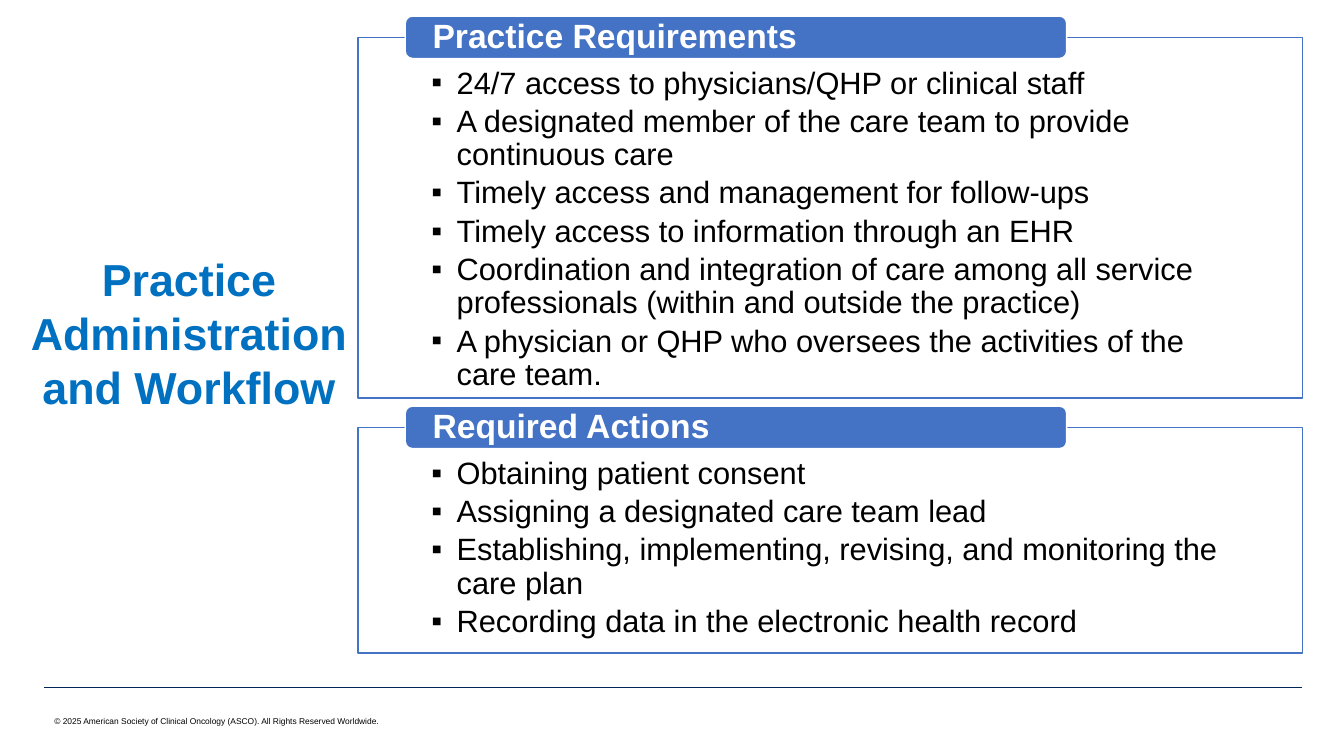
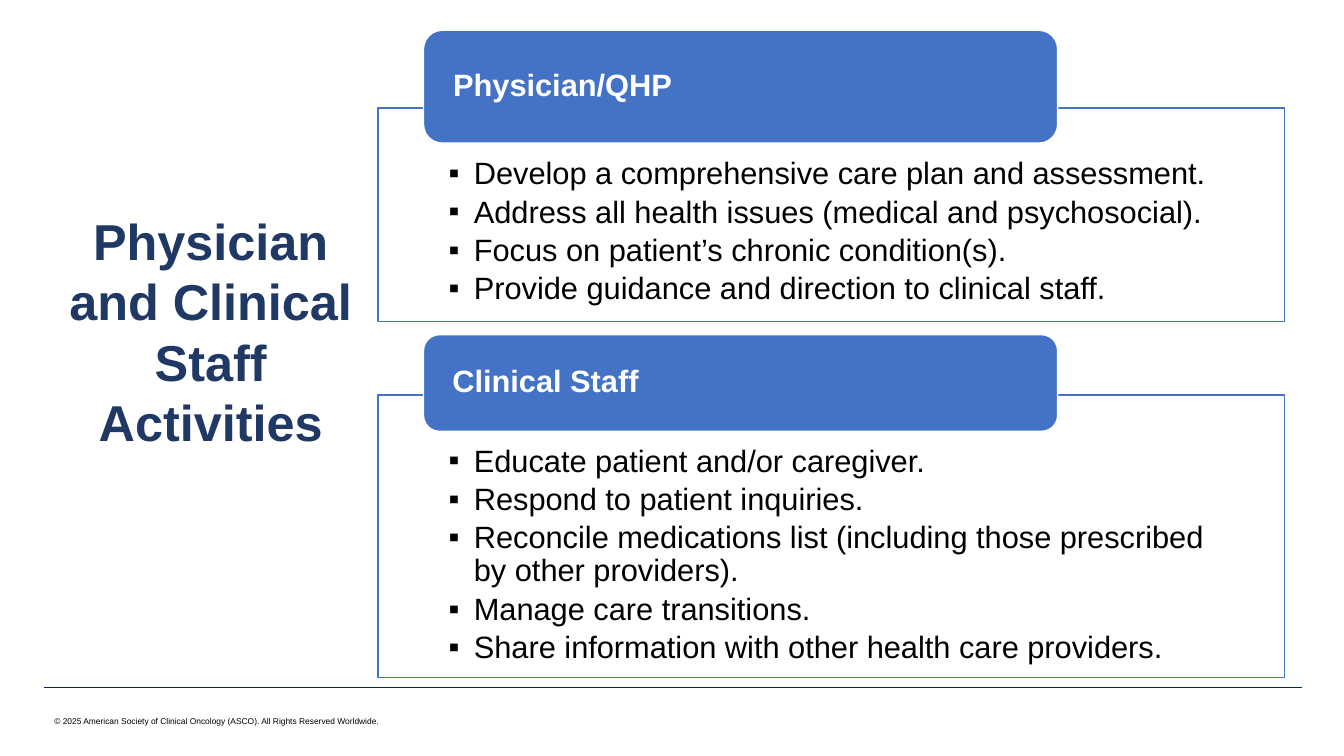
from dataclasses import dataclass

import pptx
import pptx.dml.color
import pptx.enum.shapes
import pptx.enum.text
import pptx.oxml.ns
import pptx.oxml.xmlchemy
import pptx.presentation
import pptx.shapes.autoshape
import pptx.shapes.base
import pptx.slide
import pptx.text.text
import pptx.util
from lxml import etree

EMU_PER_PX = 9144  # 100 px to the inch


@dataclass(frozen=True)
class Theme:
    font: str = "Arial"
    accent: str = "4472C4"
    white: str = "FFFFFF"
    black: str = "000000"
    rule: str = "002557"
    body_size: int = 22
    footer_size: int = 6
    outline: int = 1
    rule_width: float = 0.25
    frame_opacity: int = 90
    line_spacing: float = 0.9
    bullet_gap: float = 3.6


@dataclass(frozen=True)
class Box:
    left: int
    top: int
    width: int
    height: int


@dataclass(frozen=True)
class Title:
    text: str
    box: Box
    size: int
    color: str


@dataclass(frozen=True)
class Panel:
    """A framed bullet list; the heading tab straddles the frame's top edge."""
    heading: str
    tab_top: int
    tab_height: int
    top: int
    height: int
    bullets: tuple[str, ...]


@dataclass(frozen=True)
class PanelStyle:
    left: int
    width: int
    side_inset: int
    top_inset: int
    heading_inset: int
    heading_size: int


@dataclass(frozen=True)
class Page:
    title: Title
    style: PanelStyle
    panels: tuple[Panel, ...]


THEME = Theme()
FOOTER = "© 2025 American Society of Clinical Oncology (ASCO). All Rights Reserved Worldwide."
PAGES = (
    Page(
        Title("Practice Administration and Workflow", Box(19, 245, 337, 172), 32, "0070C0"),
        PanelStyle(355, 937, 73, 30, 25, 24),
        (
            Panel("Practice Requirements", 16, 42, 37, 358, (
                "24/7 access to physicians/QHP or clinical staff",
                "A designated member of the care team to provide continuous care",
                "Timely access and management for follow-ups",
                "Timely access to information through an EHR",
                "Coordination and integration of care among all service professionals "
                "(within and outside the practice)",
                "A physician or QHP who oversees the activities of the care team.",
            )),
            Panel("Required Actions", 403, 42, 424, 224, (
                "Obtaining patient consent",
                "Assigning a designated care team lead",
                "Establishing, implementing, revising, and monitoring the care plan",
                "Recording data in the electronic health record",
            )),
        ),
    ),
    Page(
        Title("Physician and Clinical Staff Activities", Box(54, 203, 310, 249), 36, "203864"),
        PanelStyle(375, 899, 70, 50, 24, 22),
        (
            Panel("Physician/QHP", 30, 112, 107, 212, (
                "Develop a comprehensive care plan and assessment.",
                "Address all health issues (medical and psychosocial).",
                "Focus on patient’s chronic condition(s).",
                "Provide guidance and direction to clinical staff.",
            )),
            Panel("Clinical Staff", 332, 96, 392, 280, (
                "Educate patient and/or caregiver.",
                "Respond to patient inquiries.",
                "Reconcile medications list (including those prescribed by other providers).",
                "Manage care transitions.",
                "Share information with other health care providers.",
            )),
        ),
    ),
)


def px(n: int) -> pptx.util.Emu:
    return pptx.util.Emu(n * EMU_PER_PX)


def rgb(value: str) -> pptx.dml.color.RGBColor:
    return pptx.dml.color.RGBColor.from_string(value)


def place(box: Box) -> tuple[pptx.util.Emu, ...]:
    return px(box.left), px(box.top), px(box.width), px(box.height)


def format_runs(p: pptx.text.text._Paragraph, size: int, color: str, bold: bool = False) -> None:
    for r in p.runs:
        r.font.name = THEME.font
        r.font.size = pptx.util.Pt(size)
        r.font.bold = bold
        r.font.color.rgb = rgb(color)


def set_insets(tf: pptx.text.text.TextFrame, side: int, top: int, bottom: int) -> None:
    tf.margin_left = tf.margin_right = px(side)
    tf.margin_top, tf.margin_bottom = px(top), px(bottom)


def add_box(s: pptx.slide.Slide, kind: pptx.enum.shapes.MSO_SHAPE, box: Box,
            fill: str, line: str) -> pptx.shapes.autoshape.Shape:
    sp = s.shapes.add_shape(kind, *place(box))
    sp.shadow.inherit = False
    sp.fill.solid()
    sp.fill.fore_color.rgb = rgb(fill)
    sp.line.color.rgb = rgb(line)
    sp.line.width = pptx.util.Pt(THEME.outline)
    sp.text_frame.word_wrap = True
    return sp


def add_bullet(p: pptx.text.text._Paragraph) -> None:
    qn = pptx.oxml.ns.qn
    pPr = p._p.get_or_add_pPr()
    pPr.set("marL", str(px(25)))
    pPr.set("indent", str(px(-25)))
    etree.SubElement(pPr, qn("a:buFont")).set("typeface", THEME.font)
    etree.SubElement(pPr, qn("a:buChar")).set("char", "▪")


def add_panel(s: pptx.slide.Slide, panel: Panel, style: PanelStyle) -> None:
    shapes = pptx.enum.shapes.MSO_SHAPE
    anchors = pptx.enum.text.MSO_ANCHOR
    left = pptx.enum.text.PP_ALIGN.LEFT

    frame = add_box(s, shapes.RECTANGLE, Box(style.left, panel.top, style.width, panel.height),
                    THEME.white, THEME.accent)
    fill = frame.element.spPr.find(".//" + pptx.oxml.ns.qn("a:srgbClr"))
    etree.SubElement(fill, pptx.oxml.ns.qn("a:alpha")).set("val", str(THEME.frame_opacity * 1000))
    tf = frame.text_frame
    tf.vertical_anchor = anchors.TOP
    set_insets(tf, style.side_inset, style.top_inset, 17)
    tf.text = "\n".join(panel.bullets)
    for p in tf.paragraphs:
        add_bullet(p)
        p.alignment = left
        p.line_spacing = THEME.line_spacing
        p.space_after = pptx.util.Pt(THEME.bullet_gap)
        format_runs(p, THEME.body_size, THEME.black)

    tab_box = Box(style.left + round(style.width * 0.05), panel.tab_top,
                  round(style.width * 0.7), panel.tab_height)
    tab = add_box(s, shapes.ROUNDED_RECTANGLE, tab_box, THEME.accent, THEME.white)
    tf = tab.text_frame
    tf.vertical_anchor = anchors.MIDDLE
    set_insets(tf, style.heading_inset, 0, 0)
    tf.text = panel.heading
    p = tf.paragraphs[0]
    p.alignment = left
    p.line_spacing = THEME.line_spacing
    format_runs(p, style.heading_size, THEME.white, bold=True)


def set_title(s: pptx.slide.Slide, title: Title) -> None:
    sp = s.shapes.title
    sp.left, sp.top, sp.width, sp.height = place(title.box)
    tf = sp.text_frame
    tf.text = title.text
    tf.word_wrap = True
    tf.auto_size = pptx.enum.text.MSO_AUTO_SIZE.NONE
    tf.vertical_anchor = pptx.enum.text.MSO_ANCHOR.TOP
    set_insets(tf, 10, 5, 5)
    p = tf.paragraphs[0]
    p.alignment = pptx.enum.text.PP_ALIGN.CENTER
    p.line_spacing = 1.0
    format_runs(p, title.size, title.color, bold=True)


def move_to_layout(sp: pptx.shapes.base.BaseShape, layout: pptx.slide.SlideLayout,
                   shape_id: int) -> None:
    sp.element.xpath(".//p:cNvPr")[0].set("id", str(shape_id))
    layout.shapes.element.append(sp.element)


def add_footer(s: pptx.slide.Slide) -> None:
    """Draw the rule and copyright line, then hand them to the layout all slides share."""
    rule = s.shapes.add_connector(pptx.enum.shapes.MSO_CONNECTOR.STRAIGHT,
                                  px(44), px(682), px(1291), px(682))
    rule.line.color.rgb = rgb(THEME.rule)
    rule.line.width = pptx.util.Pt(THEME.rule_width)
    etree.SubElement(rule.element.spPr, pptx.oxml.ns.qn("a:effectLst"))

    note = s.shapes.add_textbox(*place(Box(44, 706, 350, 20)))
    note.text_frame.word_wrap = False
    note.text_frame.text = FOOTER
    format_runs(note.text_frame.paragraphs[0], THEME.footer_size, THEME.black)

    for shape_id, sp in enumerate((rule, note), start=101):
        move_to_layout(sp, s.slide_layout, shape_id)


def add_page(prs: pptx.presentation.Presentation, page: Page) -> pptx.slide.Slide:
    s = prs.slides.add_slide(prs.slide_layouts.get_by_name("Title Only"))
    for panel in page.panels:
        add_panel(s, panel, page.style)
    set_title(s, page.title)
    return s


def main() -> None:
    prs = pptx.Presentation()
    prs.slide_width, prs.slide_height = px(1333), px(750)
    slides = [add_page(prs, page) for page in PAGES]
    add_footer(slides[0])
    prs.save("out.pptx")


if __name__ == "__main__":
    main()
